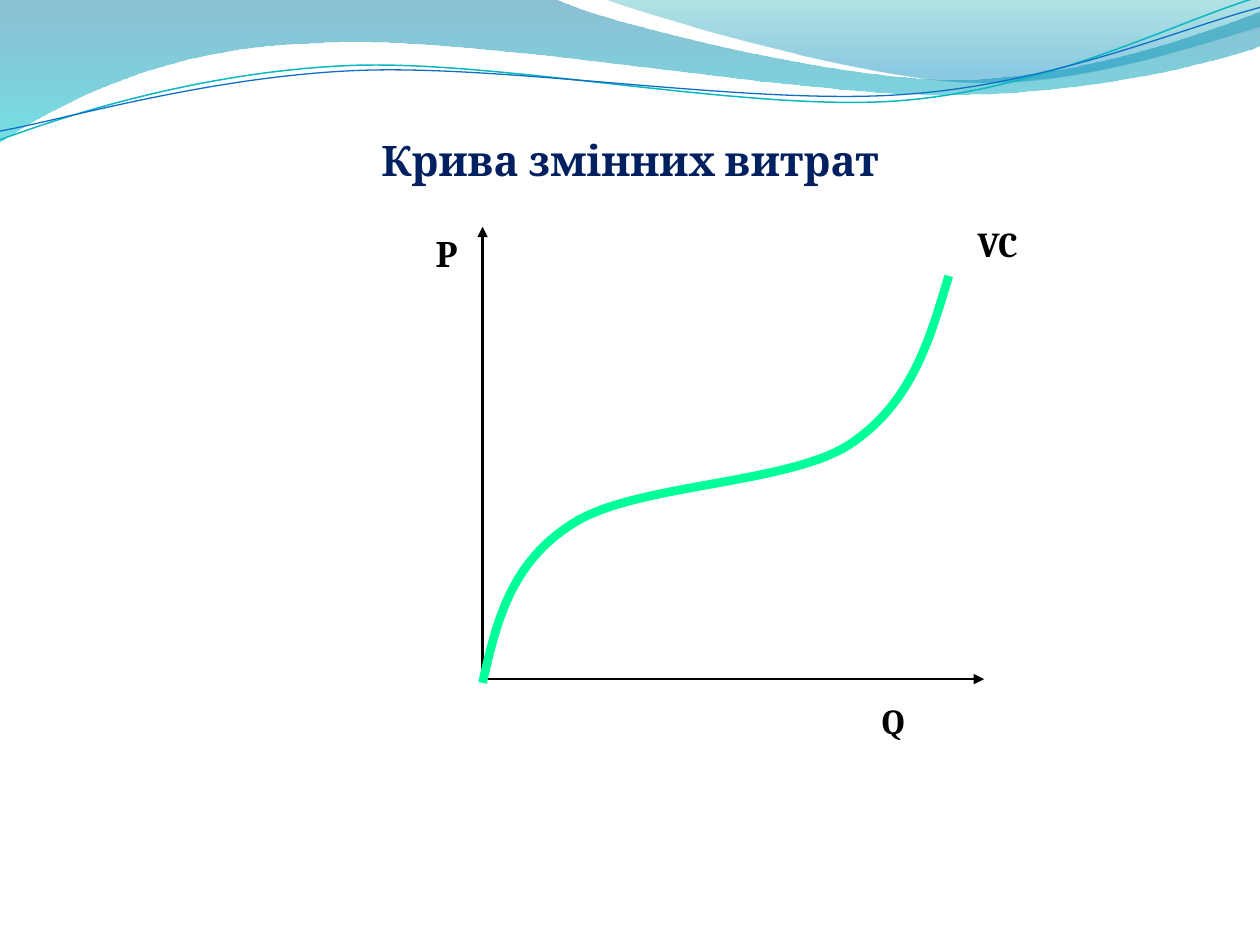
from dataclasses import dataclass
from math import cos, radians, sin
from lxml.etree import SubElement
from pptx import Presentation
from pptx.dml.color import RGBColor as Color
from pptx.enum.shapes import MSO_CONNECTOR as Connector
from pptx.enum.text import MSO_AUTO_SIZE as AutoSize, PP_ALIGN as Align
from pptx.oxml.ns import qn
from pptx.util import Inches, Pt


@dataclass(frozen=True)
class Theme:
    font: str = "Cambria"
    title_size: int = 24
    label_size: int = 20
    title: str = "002060"
    ink: str = "000000"
    cost_curve: str = "00FF99"
    teal_line: str = "0AB8BF"
    blue_line: str = "0F6FC6"
    # Gradient stops: position, colour, opacity in percent
    wide_wave: tuple = ((0, "0074A1", 45), (1, "00C6CF", 55))
    right_wave: tuple = ((0, "00A1A9", 30), (0.8, "008BBF", 45))


theme = Theme()

presentation = Presentation()
presentation.slide_width, presentation.slide_height = Inches(10), Inches(7.5)
slide = presentation.slides.add_slide(presentation.slide_layouts[6])


def add_path(start, pieces, closed=False, line=None):
    """Draw an outline; a piece holds one point (line) or three (cubic curve)."""
    points = [point for piece in pieces for point in piece]
    vertices = [(Inches(x), Inches(y)) for x, y in points]
    builder = slide.shapes.build_freeform(Inches(start[0]), Inches(start[1]))
    builder.add_line_segments(vertices, close=closed)
    shape = builder.convert_to_shape()
    shape.shadow.inherit = False
    # Join every three control points into one Bézier segment
    segments = iter(list(shape._element.iter(qn("a:lnTo"))))
    for piece in pieces:
        first, *others = [next(segments) for _ in piece]
        if others:
            first.tag = qn("a:cubicBezTo")
            for other in others:
                first.append(other[0])
                other.getparent().remove(other)
    if line:
        color, width = line
        shape.fill.background()
        shape.line.color.rgb = Color.from_string(color)
        shape.line.width = Pt(width)
    return shape


def add_text(text, left, top, width, height, size, color, align=None):
    box = slide.shapes.add_textbox(*map(Inches, (left, top, width, height)))
    box.text_frame.word_wrap = True
    box.text_frame.auto_size = AutoSize.SHAPE_TO_FIT_TEXT
    paragraph = box.text_frame.paragraphs[0]
    paragraph.text = text
    paragraph.alignment = align
    paragraph.font.name = theme.font
    paragraph.font.size = Pt(size)
    paragraph.font.bold = True
    paragraph.font.color.rgb = Color.from_string(color)


# Header waves
waves = [
    ((0, 0), [
        [(4.4, -0.01)],
        [(4.76, 0.17), (6.64, 0.63), (7.58, 0.63)],
        [(8.53, 0.63), (9.58, 0.26), (10, 0.09)],
        [(10.01, 0.36)],
        [(9.83, 0.44), (8.7, 0.76), (7.46, 0.75)],
        [(6.22, 0.75), (3.82, 0.28), (2.57, 0.34)],
        [(1.29, 0.36), (0.46, 0.83), (-0.01, 1.13)],
        [(0, 0)],
    ], theme.wide_wave),
    ((4.79, -0.01), [
        [(5.09, 0.11), (6.82, 0.62), (7.69, 0.65)],
        [(8.56, 0.69), (9.61, 0.32), (10, 0.21)],
        [(10, 0)],
        [(4.79, -0.01)],
    ], theme.right_wave),
]
for start, pieces, stops in waves:
    wave = add_path(start, pieces, closed=True)
    wave.line.fill.background()
    wave.fill.gradient()
    wave.fill.gradient_angle = 270
    for stop, (position, color, _) in zip(wave.fill.gradient_stops, stops):
        stop.position = position
        stop.color.rgb = Color.from_string(color)
    for node, (_, _, opacity) in zip(wave._element.spPr.iter(qn("a:srgbClr")), stops):
        SubElement(node, qn("a:alpha"), val=str(opacity * 1000))

# Header lines: laid out level, then tilted about their centre
TILT = 2.7
header_lines = [
    ((4.99, 0.58), (0, 1.11), [
        [(0.48, 0.93), (1.58, 0.57), (2.77, 0.52)],
        [(3.95, 0.47), (5.93, 0.89), (7.13, 0.8)],
        [(8.33, 0.71), (9.38, 0.15), (9.98, -0.02)],
    ], (theme.teal_line, 0.85)),
    ((5, 0.59), (0, 1.04), [
        [(0.47, 0.96), (1.64, 0.61), (2.83, 0.56)],
        [(4.03, 0.51), (5.97, 0.84), (7.17, 0.75)],
        [(8.36, 0.67), (9.41, 0.21), (10, 0.06)],
    ], (theme.blue_line, 0.75)),
]
cosine, sine = cos(radians(TILT)), sin(radians(TILT))
for (center_x, center_y), start, pieces, line in header_lines:
    (level_start,), *level_pieces = [
        [(center_x + (x - center_x) * cosine - (y - center_y) * sine,
          center_y + (x - center_x) * sine + (y - center_y) * cosine) for x, y in piece]
        for piece in ([start], *pieces)]
    add_path(level_start, level_pieces, line=line).rotation = 360 - TILT

# Title
add_text("Крива змінних витрат", 1.17, 1.02, 7.66, 0.91,
         theme.title_size, theme.title, Align.CENTER)

# Axes, drawn from the origin
origin = (3.83, 5.39)
for end in ((3.83, 1.8), (7.81, 5.39)):
    axis = slide.shapes.add_connector(Connector.STRAIGHT, *map(Inches, origin + end))
    axis.line.color.rgb = Color.from_string(theme.ink)
    axis.line.width = Pt(1.5)
    SubElement(axis.line._get_or_add_ln(), qn("a:tailEnd"), type="triangle")
    SubElement(axis._element.spPr, qn("a:effectLst"))

# Axis and curve labels
for text, left, top, width in (("Р", 3.36, 1.8, 0.39),
                               ("Q", 6.9, 5.5, 0.76),
                               ("VC", 7.66, 1.72, 0.71)):
    add_text(text, left, top, width, 0.44, theme.label_size, theme.ink)

# Variable cost curve
add_path((3.83, 5.42), [
    [(3.94, 4.94), (4.05, 4.47), (4.54, 4.16)],
    [(5.02, 3.84), (6.24, 3.85), (6.74, 3.53)],
    [(7.24, 3.2), (7.38, 2.69), (7.53, 2.19)],
], line=(theme.cost_curve, 5))

presentation.save("out.pptx")
